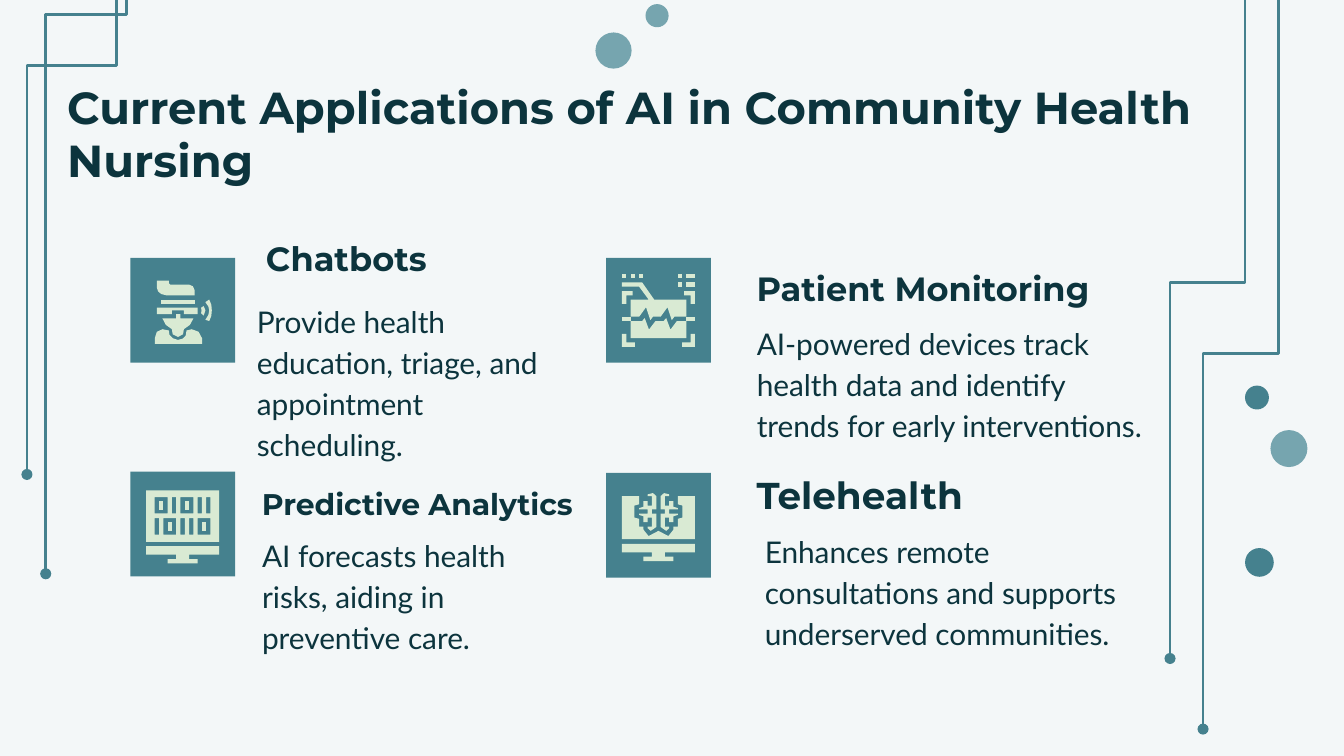
from lxml.etree import SubElement
from pptx import Presentation
from pptx.dml.color import RGBColor
from pptx.enum.shapes import MSO_CONNECTOR, MSO_SHAPE
from pptx.enum.text import MSO_ANCHOR, MSO_AUTO_SIZE, PP_ALIGN
from pptx.oxml.ns import qn
from pptx.util import Pt

INK, TEAL, MIST, MINT, PAPER = "0C343D", "45818E", "76A5AF", "D9EAD3", "F3F7F8"
TILE = 56.16
GRID_UNIT = 2.3
ICON_INSET = 8.5

CIRCUIT_LINES = [
    ((67.7, -62), (24.5, 307.4), 0.189),
    ((62.6, -72), (14.4, 254.2), 0.328),
    ((685, -12.2), (644.5, 390.6), 0.5),
    ((667, -49.7), (626.8, 352.8), 0.5),
]
DOTS = [
    (319, 17.4, 19.4, MIST),
    (667, 293.6, 15.4, TEAL),
    (680.6, 230.4, 19.8, MIST),
    (345.8, 2.2, 12.4, MIST),
    (667, 206.6, 12.8, TEAL),
]
APPLICATIONS = [
    ("Chatbots", 18, (135.4, 133.2, 155.5, 23),
     "Provide health education, triage, and appointment scheduling.",
     (130.4, 152.6, 185.8, 89.3)),
    ("Patient Monitoring", 18, (398.2, 140.4, 198.7, 31.7),
     "AI-powered devices track health data and identify trends for early interventions.",
     (398.2, 164.2, 226, 82.8)),
    ("Predictive Analytics", 16, (133.2, 252.7, 181.4, 33.8),
     "AI forecasts health risks, aiding in preventive care.",
     (133.2, 277.9, 177.8, 76.3)),
    ("Telehealth", 20, (398.2, 252.7, 155.5, 31.7),
     "Enhances remote consultations and supports underserved communities.",
     (402.5, 275.8, 222.5, 80.6)),
]


def color(value):
    return RGBColor.from_string(value)


def fill_plain(shape, value):
    shape.shadow.inherit = False
    shape.fill.solid()
    shape.fill.fore_color.rgb = color(value)
    shape.line.fill.background()


def place(shape, box):
    shape.left, shape.top, shape.width, shape.height = map(Pt, box)


def write_text(shape, box, text, size, font_name, bold, anchor, spacing):
    place(shape, box)
    frame = shape.text_frame
    frame.word_wrap = True
    frame.auto_size = MSO_AUTO_SIZE.NONE
    frame.vertical_anchor = anchor
    frame.margin_left = frame.margin_right = frame.margin_top = frame.margin_bottom = Pt(7.2)
    frame.text = text
    paragraph = frame.paragraphs[0]
    paragraph.alignment = PP_ALIGN.LEFT
    paragraph.line_spacing = spacing
    paragraph.space_before = paragraph.space_after = Pt(0)
    paragraph.font.name = font_name
    paragraph.font.size = Pt(size)
    paragraph.font.bold = bold
    paragraph.font.color.rgb = color(INK)
    properties = paragraph._p.get_or_add_pPr()
    properties.set("marL", "0")
    properties.set("indent", "0")
    properties.insert_element_before(
        properties.makeelement(qn("a:buNone"), {}), "a:tabLst", "a:defRPr", "a:extLst")


def add_circuit_line(slide, start, end, bend):
    length, breadth = end[1] - start[1], start[0] - end[0]
    left = (start[0] + end[0] - length) / 2
    top = (start[1] + end[1] - breadth) / 2
    connector = slide.shapes.add_connector(
        MSO_CONNECTOR.ELBOW, Pt(left), Pt(top), Pt(left + length), Pt(top + breadth))
    connector.line.color.rgb = color(TEAL)
    connector.line.width = Pt(1.5)
    properties = connector._element.spPr
    properties.find(qn("a:xfrm")).set("rot", "5400000")
    geometry = properties.find(qn("a:prstGeom"))
    adjustments = geometry.find(qn("a:avLst"))
    if adjustments is None:
        adjustments = SubElement(geometry, qn("a:avLst"))
    SubElement(adjustments, qn("a:gd"), name="adj1", fmla=f"val {round(bend * 100000)}")
    SubElement(properties.find(qn("a:ln")), qn("a:tailEnd"), type="oval")
    SubElement(properties, qn("a:effectLst"))


def add_block(slide, kind, box, value):
    shape = slide.shapes.add_shape(kind, *map(Pt, box))
    fill_plain(shape, value)


def add_icon(slide, left, top, parts):
    for contours in parts:
        outlines = [[(Pt(left + x * GRID_UNIT), Pt(top + y * GRID_UNIT)) for x, y in contour]
                    for contour in contours]
        builder = slide.shapes.build_freeform(*outlines[0][0])
        builder.add_line_segments(outlines[0][1:])
        for outline in outlines[1:]:
            builder.move_to(*outline[0])
            builder.add_line_segments(outline[1:])
        fill_plain(builder.convert_to_shape(), MINT)


def rectangle(left, top, right, bottom):
    return [(left, top), (right, top), (right, bottom), (left, bottom)]


def mirror(points):
    return [(17 - x, y) for x, y in reversed(points)]


def monitor_stand(y):
    half = [(0, y), (0, y + 2), (7, y + 2), (7, y + 3), (5, y + 3), (5, y + 4)]
    return half + mirror(half)


def headset_icon():
    hair = [(2.5, 0), (2.5, 1.6), (2.8, 2.5), (3.5, 3.1), (4.7, 3.4), (11.3, 3.4),
            (11.3, 2.2), (10.9, 1.3), (10, 0.9), (5.6, 0.9), (5.3, 0.6), (5.3, 0)]
    visor = [(2.5, 6.3), (2.5, 7.8), (6, 7.8), (6, 6.9), (8.8, 6.9), (8.8, 7.8),
             (12, 7.8), (12, 6.3)]
    large_wave = [(14.7, 4.4), (13.8, 5), (14.5, 6), (14.7, 6.9), (14.5, 8), (13.8, 9.1),
                  (14.7, 9.4), (15.2, 8.2), (15.3, 6.9), (15.2, 5.6)]
    small_wave = [(13.4, 5.9), (12.8, 6.3), (12.9, 6.9), (12.8, 7.6), (13.4, 8.1), (13.8, 6.9)]
    shoulders = [(3.8, 11.3), (2.5, 11.9), (2, 13.4), (2, 14.7), (13, 14.7), (13, 13.4),
                 (12.2, 11.9), (10.6, 11.3), (9.4, 11.6), (9.2, 12.8), (8.5, 13.5),
                 (7.4, 13.8), (6.2, 13.4), (5.4, 12.6), (5.3, 11.6)]
    chin = [(7, 7.8), (7, 8.8), (3.8, 8.8), (4.6, 10.3), (6, 11.3), (6.2, 12.5), (7.4, 13.1),
            (8.6, 12.5), (8.8, 11.3), (10.2, 10.3), (11, 8.8), (8, 8.8), (8, 7.8)]
    band = rectangle(3.5, 4.4, 11.3, 5.3)
    return [[part] for part in (hair, visor, large_wave, small_wave, shoulders, chin, band)]


def pulse_icon():
    upper = [(0, 2), (0, 3), (4, 3), (6.2, 6), (2, 6), (2, 10), (4, 10), (5.6, 7.8),
             (6.6, 10.8), (7.2, 10), (9, 10), (10.6, 7.8), (11.6, 10.8), (12.2, 10),
             (15, 10), (15, 6), (7.5, 6), (4.7, 2)]
    lower = [(5.3, 10.3), (4.7, 11), (2, 11), (2, 15), (15, 15), (15, 11), (12.8, 11),
             (11.3, 13), (10.3, 10.3), (9.7, 11), (7.8, 11), (6.3, 13)]
    top_corner = [(0, 4), (0, 7), (1, 7), (1, 5), (2.5, 5), (2.5, 4)]
    bottom_corner = [(0, 14), (0, 17), (3, 17), (3, 16), (1, 16), (1, 14)]
    marks = [rectangle(x, 0, x + 1, 1) for x in (0, 2, 4)]
    marks += [rectangle(x, y, x + width, y + 1) for y in (0, 2) for x, width in ((13, 1), (15, 2))]
    marks += [rectangle(x, 10, x + 2, 11) for x in (0, 15)]
    corners = [top_corner, mirror(top_corner), bottom_corner, mirror(bottom_corner)]
    return [[part] for part in [upper, lower] + corners + marks]


def binary_icon():
    rows = [(1.6, (2, 8), (6, 12, 14)), (6.5, (4, 12), (2, 8, 10))]
    screen = [rectangle(0, 0, 17, 12)]
    centers = []
    for y, zeros, ones in rows:
        screen += [rectangle(x, y, x + 3, y + 3.8) for x in zeros]
        screen += [rectangle(x, y, x + 1, y + 3.8) for x in ones]
        centers += [[rectangle(x + 1, y + 0.9, x + 2, y + 2.9)] for x in zeros]
    return centers + [screen, [monitor_stand(13)]]


def brain_icon():
    lobe = [(7.2, 0), (6, 0.3), (6, 0.7), (7, 0.7), (7, 2.9), (6, 2.9), (6, 1.9), (5, 1.9),
            (5, 3.2), (4, 3.5), (4, 3.8), (6, 3.8), (6, 4.8), (4, 4.8), (4, 5.1), (5, 5.4),
            (5, 6.8), (6, 6.8), (6, 5.7), (7, 5.7), (7, 7.8), (6, 7.8), (6, 8.2), (6.7, 8.8),
            (8, 7.9), (8, 4.8), (7, 4.8), (7, 3.8), (8, 3.8), (8, 0.7)]
    half_screen = [(8.5, 8.8), (6.2, 10), (5, 8.5), (5, 7.8), (4, 7.8), (4, 6), (2.9, 5.7),
                   (2.9, 2.9), (4, 2.6), (4, 0.7), (0, 0.7), (0, 10.7)]
    screen = half_screen + mirror(half_screen)
    return [[part] for part in (lobe, mirror(lobe), monitor_stand(11.8), screen)]


def main():
    presentation = Presentation()
    presentation.slide_width, presentation.slide_height = Pt(720), Pt(405)
    slide = presentation.slides.add_slide(presentation.slide_layouts.get_by_name("Comparison"))
    slide.background.fill.solid()
    slide.background.fill.fore_color.rgb = color(PAPER)

    for start, end, bend in CIRCUIT_LINES:
        add_circuit_line(slide, start, end, bend)
    for left, top, diameter, value in DOTS:
        add_block(slide, MSO_SHAPE.OVAL, (left, top, diameter, diameter), value)

    write_text(slide.shapes.title, (28.8, 35.3, 634.3, 63.4),
               "Current Applications of AI in Community Health Nursing",
               24, "Montserrat", True, MSO_ANCHOR.TOP, 1)
    bodies = list(slide.placeholders)[1:5]
    for body, (heading, size, heading_box, text, box) in zip(bodies, APPLICATIONS):
        write_text(body, box, text, 16, "Lato", False, MSO_ANCHOR.TOP, 1.15)
        heading_shape = slide.shapes.add_textbox(*map(Pt, heading_box))
        write_text(heading_shape, heading_box, heading, size, "Montserrat", True,
                   MSO_ANCHOR.BOTTOM, 1.15)

    icons = [
        (69.8, 138.2, 12.2, headset_icon()),
        (324.7, 138.2, ICON_INSET, pulse_icon()),
        (69.8, 252.7, 10, binary_icon()),
        (324.7, 253.4, 10.8, brain_icon()),
    ]
    for left, top, drop, parts in icons:
        add_block(slide, MSO_SHAPE.RECTANGLE, (left, top, TILE, TILE), TEAL)
        add_icon(slide, left + ICON_INSET, top + drop, parts)

    presentation.save("out.pptx")


if __name__ == "__main__":
    main()
